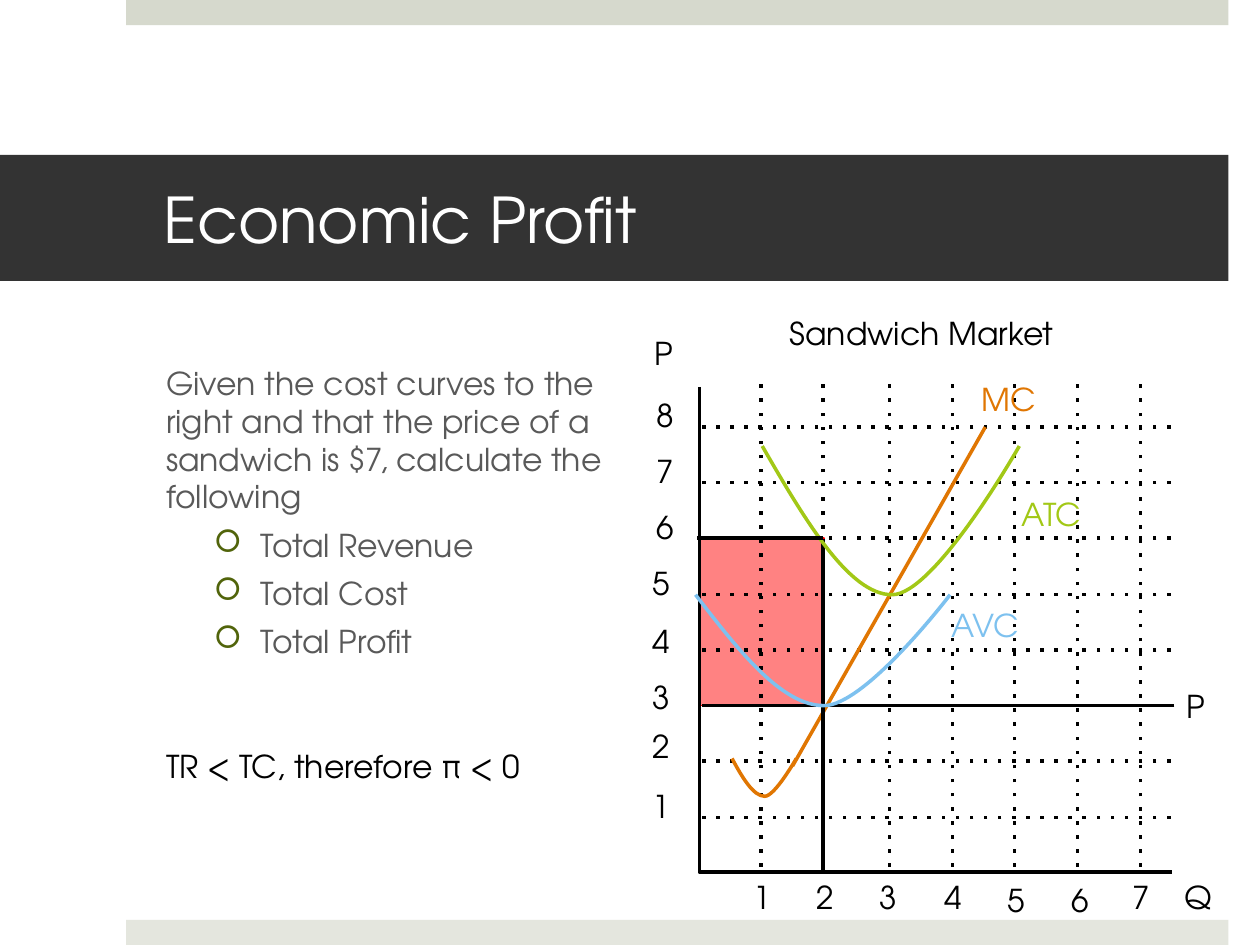
from dataclasses import dataclass

from lxml import etree
from pptx import Presentation
from pptx.dml.color import RGBColor
from pptx.enum.dml import MSO_LINE
from pptx.enum.shapes import MSO_CONNECTOR, MSO_SHAPE
from pptx.enum.text import MSO_ANCHOR, MSO_AUTO_SIZE, PP_ALIGN
from pptx.oxml.ns import qn
from pptx.util import Pt

PX = 9144  # 100 px to the inch
FONT = "TeX Gyre Adventor"
RECT, LINE = MSO_SHAPE.RECTANGLE, MSO_CONNECTOR.STRAIGHT
DOT, FIT, FIXED = MSO_LINE.ROUND_DOT, MSO_AUTO_SIZE.SHAPE_TO_FIT_TEXT, MSO_AUTO_SIZE.NONE
MIDDLE, LEFT, CENTER = MSO_ANCHOR.MIDDLE, PP_ALIGN.LEFT, PP_ALIGN.CENTER
BLACK, GRAY, ORANGE, GREEN, BLUE = "000000", "595959", "E07602", "A2C816", "7DC1EF"


@dataclass
class Label:
    text: str
    x: int
    y: int
    w: int
    h: int = 40
    color: str = BLACK
    align: PP_ALIGN = LEFT


@dataclass
class Curve:
    """Joined cubic Béziers: a start, then three points for each piece."""
    color: str
    points: list[tuple[int, int]]


def emu(*vals: int) -> list[int]:
    return [v * PX for v in vals]


def rgb(code: str) -> RGBColor:
    return RGBColor.from_string(code)


def paint(shape, code: str) -> None:
    shape.fill.solid()
    shape.fill.fore_color.rgb = rgb(code)


def style(par, color: str, size: int = 18) -> None:
    par.font.name, par.font.size = FONT, Pt(size)
    par.font.color.rgb = rgb(color)


def stroke(line, color: str, width: int = 2) -> None:
    line.color.rgb, line.width = rgb(color), Pt(width)


def add_rect(slide, x: int, y: int, w: int, h: int, fill: str):
    box = slide.shapes.add_shape(RECT, *emu(x, y, w, h))
    box.shadow.inherit = False
    paint(box, fill)
    box.line.fill.background()
    return box


def add_line(slide, x1: int, y1: int, x2: int, y2: int, color: str = BLACK,
             dotted: bool = False) -> None:
    line = slide.shapes.add_connector(LINE, *emu(x1, y1, x2, y2))
    stroke(line.line, color)
    if dotted:
        line.line.dash_style = DOT
        next(line._element.iter(qn("a:prstDash"))).set("val", "dot")
    etree.SubElement(line._element.spPr, qn("a:effectLst"))


def add_path(slide, points: list[tuple[int, int]], color: str):
    first, *rest = points
    pen = slide.shapes.build_freeform(*first, scale=PX)
    pen.add_line_segments(rest, close=False)
    path = pen.convert_to_shape()
    path.shadow.inherit = False
    path.fill.background()
    stroke(path.line, color)
    return path


def add_curve(slide, curve: Curve) -> None:
    shape = add_path(slide, curve.points, curve.color)
    path = next(shape._element.iter(qn("a:path")))
    steps = path.findall(qn("a:lnTo"))
    # Each three line steps become one Bézier piece
    for i in range(0, len(steps), 3):
        piece = etree.SubElement(path, qn("a:cubicBezTo"))
        for step in steps[i:i + 3]:
            piece.append(step[0])
            path.remove(step)


def add_label(slide, item: Label) -> None:
    frame = slide.shapes.add_textbox(*emu(item.x, item.y, item.w, item.h)).text_frame
    frame.word_wrap, frame.auto_size = False, FIT
    par = frame.paragraphs[0]
    par.text, par.alignment = item.text, item.align
    style(par, item.color)


def add_bullet(par) -> None:
    props = par._p.get_or_add_pPr()
    props.set("marL", str(75 * PX))
    props.set("indent", str(-37 * PX))
    tint = etree.SubElement(props, qn("a:buClr"))
    etree.SubElement(tint, qn("a:srgbClr"), val="51640B")
    etree.SubElement(props, qn("a:buFont"), typeface="Wingdings")
    etree.SubElement(props, qn("a:buChar"), char="□")


def add_title(slide, text: str) -> None:
    title = slide.shapes.title
    title.left, title.top, title.width, title.height = emu(0, 123, 975, 100)
    paint(title, "333333")
    frame = title.text_frame
    frame.margin_left, frame.margin_right = emu(130, 30)
    frame.vertical_anchor, frame.auto_size = MIDDLE, FIXED
    par = frame.paragraphs[0]
    par.text, par.alignment = text, LEFT
    style(par, "FFFFFF", 36)


def add_body(slide, intro: str, tasks: list[str]) -> None:
    frame = slide.shapes.add_textbox(*emu(122, 284, 390, 403)).text_frame
    frame.word_wrap = True
    for i, text in enumerate([intro, *tasks]):
        par = frame.add_paragraph() if i else frame.paragraphs[0]
        par.text = text
        par.space_before = Pt(6 if i else 20)
        if i:
            par.level = 1
            add_bullet(par)
        style(par, GRAY)


COLS = [604, 653, 706, 756, 805, 855, 905]
ROWS = [round(338.6 + 44.3 * i) for i in range(8)]
Q_LEFT = [588, 638, 688, 740, 790, 841, 889]
P_TOP = [620, 572, 533, 489, 443, 398, 354, 309]

LABELS = [
    Label("P", 510, 260, 47, 58),
    Label("Q", 930, 692, 42),
    Label("Sandwich Market", 615, 244, 233, align=CENTER),
    *(Label(str(n), x, 694 if n in (5, 6) else 692, 46, 58)
      for n, x in enumerate(Q_LEFT, 1)),
    *(Label(str(n), 508 if n < 6 else 511, y, 46, 58)
      for n, y in enumerate(P_TOP, 1)),
    Label("MC", 769, 297, 64, color=ORANGE),
    Label("ATC", 801, 388, 68, color=GREEN),
    Label("AVC", 745, 476, 74, color=BLUE),
    Label("P", 932, 540, 35),
    Label("TR < TC, therefore π < 0", 122, 588, 309),
]

CURVES = [
    Curve(GREEN, [(605, 354), (639, 413), (674, 472), (708, 472),
                  (742, 472), (809, 354), (809, 354)]),
    Curve(BLUE, [(552, 472), (586, 516), (620, 560), (654, 560),
                 (687, 560), (754, 472), (754, 472)]),
    Curve(ORANGE, [(581, 602), (589, 617), (598, 632), (607, 632),
                   (615, 632), (632, 602), (632, 602)]),
]


def main() -> None:
    deck = Presentation()
    deck.slide_width, deck.slide_height = emu(1000, 750)
    slide = deck.slides.add_slide(deck.slide_layouts[5])

    # Bands, title and text
    add_rect(slide, 100, 0, 875, 20, "D6D9CD")
    add_rect(slide, 100, 730, 875, 20, "E4E6DE")
    add_title(slide, "Economic Profit")
    add_body(slide, "Given the cost curves to the right and that the price of a "
             "sandwich is $7, calculate the following",
             ["Total Revenue", "Total Cost", "Total Profit"])

    # Loss area, half transparent
    loss = add_rect(slide, 556, 427, 98, 133, "FF0000")
    stroke(loss.line, "FF0000", 1)
    tint = loss._element.spPr.find(qn("a:solidFill"))[0]
    etree.SubElement(tint, qn("a:alpha"), val="49000")

    # Grid and axes
    for x in COLS:
        add_line(slide, x, 688, x, 302, dotted=True)
    for y in ROWS:
        add_line(slide, 929, y, 554, y, dotted=True)
    add_path(slide, [(555, 307), (555, 692), (930, 692)], BLACK)

    # Price, quantity and cost lines
    add_line(slide, 629, 608, 782, 339, ORANGE)
    add_line(slide, 653, 428, 653, 692)
    add_line(slide, 932, 560, 557, 560)
    for curve in CURVES:
        add_curve(slide, curve)
    add_line(slide, 653, 427, 553, 427)

    for item in LABELS:
        add_label(slide, item)
    deck.save("out.pptx")


if __name__ == "__main__":
    main()
